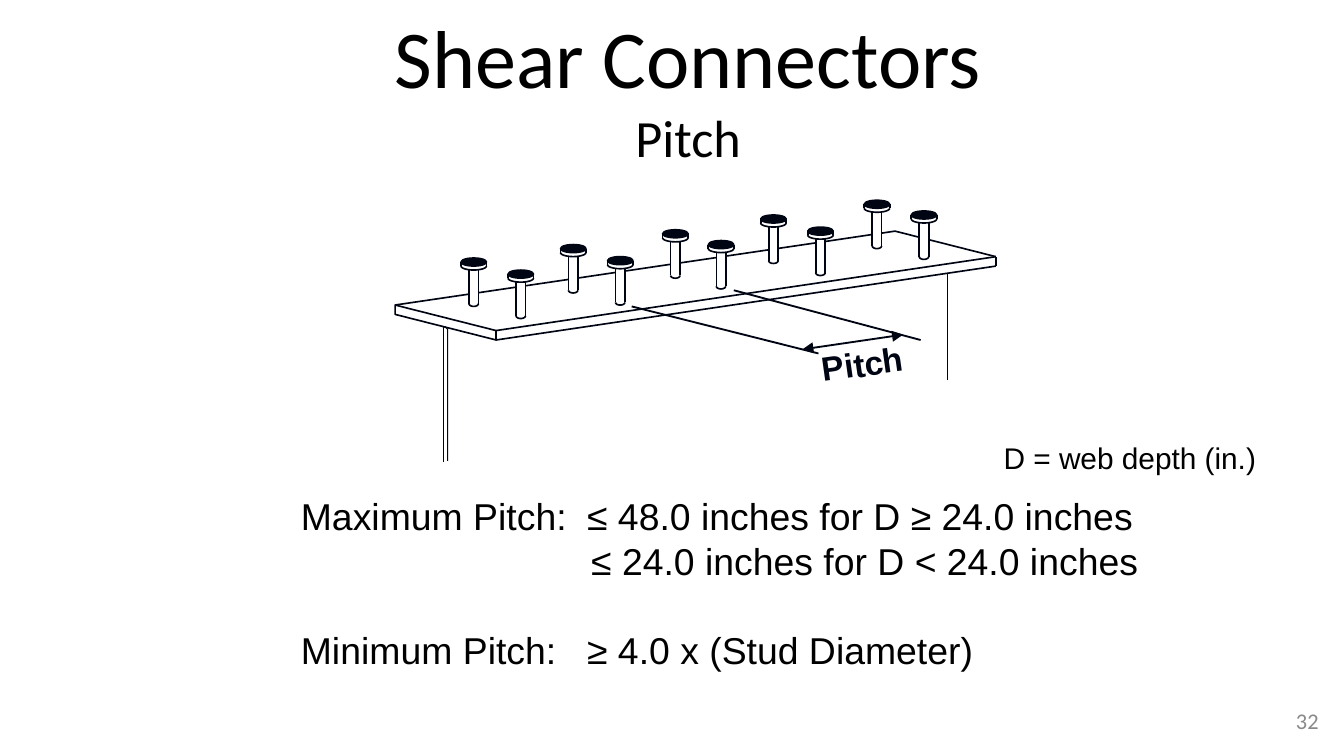
import math
from lxml import etree
from pptx import Presentation
from pptx.dml.color import RGBColor
from pptx.enum import shapes, text
from pptx.oxml import ns
from pptx.util import Inches, Pt

BLACK = RGBColor(0x00, 0x00, 0x00)
INK = RGBColor(0x00, 0x05, 0x14)
GRAY = RGBColor(0x89, 0x89, 0x89)
FINE, THIN, BOLD = 0.5, 0.88, 1

STUDS = [(3.43, 1.92), (3.78, 2.01), (4.17, 1.82), (4.52, 1.91), (4.93, 1.71),
         (5.27, 1.79), (5.66, 1.6), (6.01, 1.69), (6.43, 1.49), (6.78, 1.57)]
HEAD, LEFT, RIGHT = 0.19, 0.06, 0.13
LETTERS = [("P", 6.11, 2.58, 0.17), ("i", 6.28, 2.56, 0.07), ("t", 6.35, 2.56, 0.08),
           ("c", 6.43, 2.54, 0.14), ("h", 6.56, 2.52, 0.15)]


def add_run(para, words, size, color, font="Arial", bold=False):
    run = para.add_run()
    run.text = words
    run.font.name = font
    run.font.size = Pt(size)
    run.font.bold = bold
    run.font.color.rgb = color


def add_box(parent, left, top, width, height, wrap=True):
    box = parent.add_textbox(Inches(left), Inches(top), Inches(width), Inches(height))
    box.text_frame.word_wrap = wrap
    return box


def add_line(parent, start, end, width=THIN, arrows=False):
    line = parent.add_connector(shapes.MSO_CONNECTOR.STRAIGHT,
                                *(Inches(n) for n in (*start, *end)))
    line.line.color.rgb = INK
    line.line.width = Pt(width)
    if arrows:
        ln = line.line._get_or_add_ln()
        for tag in ("a:headEnd", "a:tailEnd"):
            etree.SubElement(ln, ns.qn(tag), type="triangle", w="med", len="med")
    etree.SubElement(line._element.spPr, ns.qn("a:effectLst"))


def add_path(parent, points, width=THIN, close=False):
    spots = [(Inches(x), Inches(y)) for x, y in points]
    pen = parent.build_freeform(*spots[0])
    pen.add_line_segments(spots[1:], close=close)
    path = pen.convert_to_shape()
    path.shadow.inherit = False
    path.fill.background()
    path.line.color.rgb = INK
    path.line.width = Pt(width)


def add_arc(parent, left, top, width, depth):
    turns = [math.pi * i / 12 for i in range(13)]
    add_path(parent, [(left + width * (1 - math.cos(t)) / 2, top + depth * math.sin(t))
                      for t in turns])


def add_stud(parent, x, y):
    cap = parent.add_shape(shapes.MSO_SHAPE.OVAL, Inches(x), Inches(y),
                           Inches(HEAD), Inches(0.06))
    cap.shadow.inherit = False
    cap.fill.solid()
    cap.fill.fore_color.rgb = INK
    cap.line.color.rgb = INK
    cap.line.width = Pt(THIN)
    add_arc(parent, x, y + 0.06, HEAD, 0.03)
    add_arc(parent, x + LEFT, y + 0.34, RIGHT - LEFT, 0.02)
    for side in (x, x + HEAD):
        add_line(parent, (side, y + 0.03), (side, y + 0.06))
    for side in (x + LEFT, x + RIGHT):
        add_line(parent, (side, y + 0.34), (side, y + 0.09))


def add_edge(parent, start, end):
    (x1, y1), (x2, y2) = start, end
    stems = [x for x, _ in STUDS if x1 < x < x2 - LEFT]
    begins = [x1] + [x + RIGHT for x in stems]
    ends = [x + LEFT for x in stems] + [x2]
    slope = (y2 - y1) / (x2 - x1)
    for a, b in zip(begins, ends):
        add_line(parent, (a, y1 + slope * (a - x1)), (b, y1 + slope * (b - x1)))


def add_beam(parent):
    add_path(parent, [(2.94, 2.27), (3.69, 2.46), (3.69, 2.53), (2.94, 2.34)], close=True)
    for y in (2.46, 2.53):
        add_line(parent, (3.69, y), (7.41, y - 0.55))
    add_line(parent, (7.41, 1.98), (7.41, 1.91))
    add_edge(parent, (2.94, 2.27), (6.66, 1.72))
    add_edge(parent, (6.66, 1.72), (7.41, 1.91))
    add_line(parent, (7.05, 2.83), (7.05, 2.03), FINE)
    add_line(parent, (3.3, 3.44), (3.3, 2.43), FINE)
    add_path(parent, [(3.31, 2.43), (3.33, 2.45), (3.33, 3.43)], FINE)


def add_pitch(parent):
    add_line(parent, (6.09, 2.63), (4.7, 2.28), BOLD)
    add_line(parent, (6.85, 2.53), (5.46, 2.16), BOLD)
    add_line(parent, (5.97, 2.6), (6.72, 2.49), BOLD, arrows=True)
    for letter, left, top, width in LETTERS:
        box = add_box(parent, left, top, width, 0.3, wrap=False)
        box.rotation = 352
        frame = box.text_frame
        frame.margin_left = frame.margin_right = 0
        frame.margin_top = frame.margin_bottom = 0
        add_run(frame.paragraphs[0], letter, 18, INK, bold=True)


def add_title(slide):
    title = slide.shapes.title
    title.left, title.top = Inches(0.62), Inches(0)
    title.width, title.height = Inches(9), Inches(0.94)
    frame = title.text_frame
    frame.auto_size = text.MSO_AUTO_SIZE.NONE
    frame.vertical_anchor = text.MSO_ANCHOR.TOP
    para = frame.paragraphs[0]
    para.alignment = text.PP_ALIGN.CENTER
    add_run(para, "Shear Connectors", 44, BLACK, "Calibri")
    para.add_line_break()
    add_run(para, "Pitch", 28, BLACK, "Calibri")


def add_rules(slide):
    frame = add_box(slide.shapes, 2.14, 3.62, 6.51, 1.45).text_frame
    rows = [("Maximum Pitch:", "≤ 48.0 inches for D ≥ 24.0 inches", 2.13, 0),
            ("", "≤ 24.0 inches for D < 24.0 inches", 2.16, 0),
            ("Minimum Pitch:", "≥ 4.0 x (Stud Diameter)", 2.13, 24)]
    for i, (label, limit, stop, gap) in enumerate(rows):
        para = frame.add_paragraph() if i else frame.paragraphs[0]
        tabs = etree.SubElement(para._p.get_or_add_pPr(), ns.qn("a:tabLst"))
        etree.SubElement(tabs, ns.qn("a:tab"), pos=str(Inches(stop)), algn="l")
        if gap:
            para.space_before = Pt(gap)
        add_run(para, f"{label}\t{limit}", 20, BLACK)


def main():
    deck = Presentation()
    deck.slide_width = Inches(10)
    deck.slide_height = deck.slide_width * 9 // 16
    slide = deck.slides.add_slide(deck.slide_layouts[5])
    add_title(slide)
    page = add_box(slide.shapes, 7.58, 5.21, 2.33, 0.3).text_frame
    page.vertical_anchor = text.MSO_ANCHOR.MIDDLE
    page.paragraphs[0].alignment = text.PP_ALIGN.RIGHT
    add_run(page.paragraphs[0], "32", 12, GRAY, "Calibri")
    add_rules(slide)
    group = slide.shapes.add_group_shape().shapes
    add_beam(group)
    for x, y in STUDS:
        add_stud(group, x, y)
    add_pitch(group)
    note = add_box(slide.shapes, 7.37, 3.22, 2.5, 0.37).text_frame
    add_run(note.paragraphs[0], "D = web depth (in.)", 16, BLACK)
    deck.save("out.pptx")


if __name__ == "__main__":
    main()
